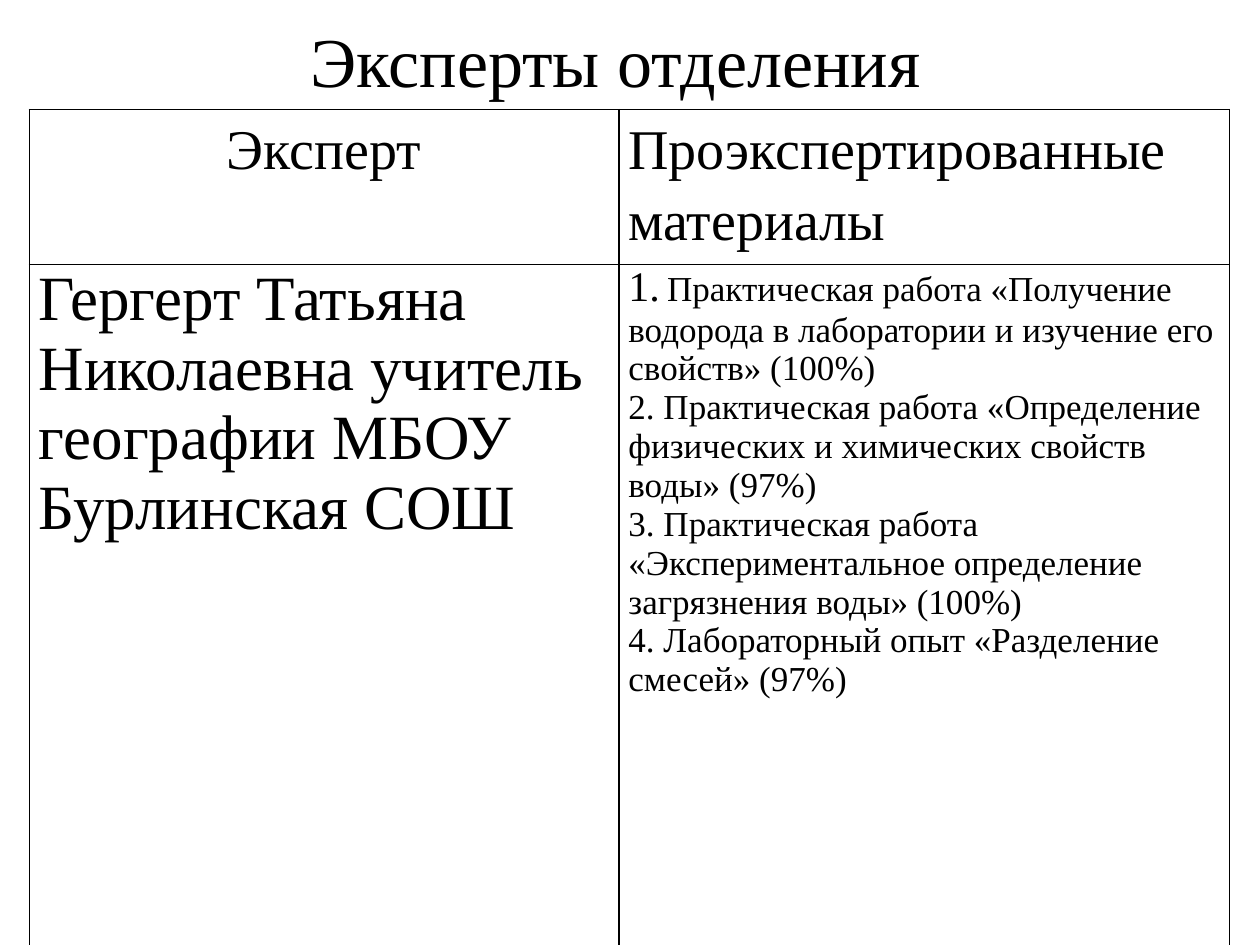
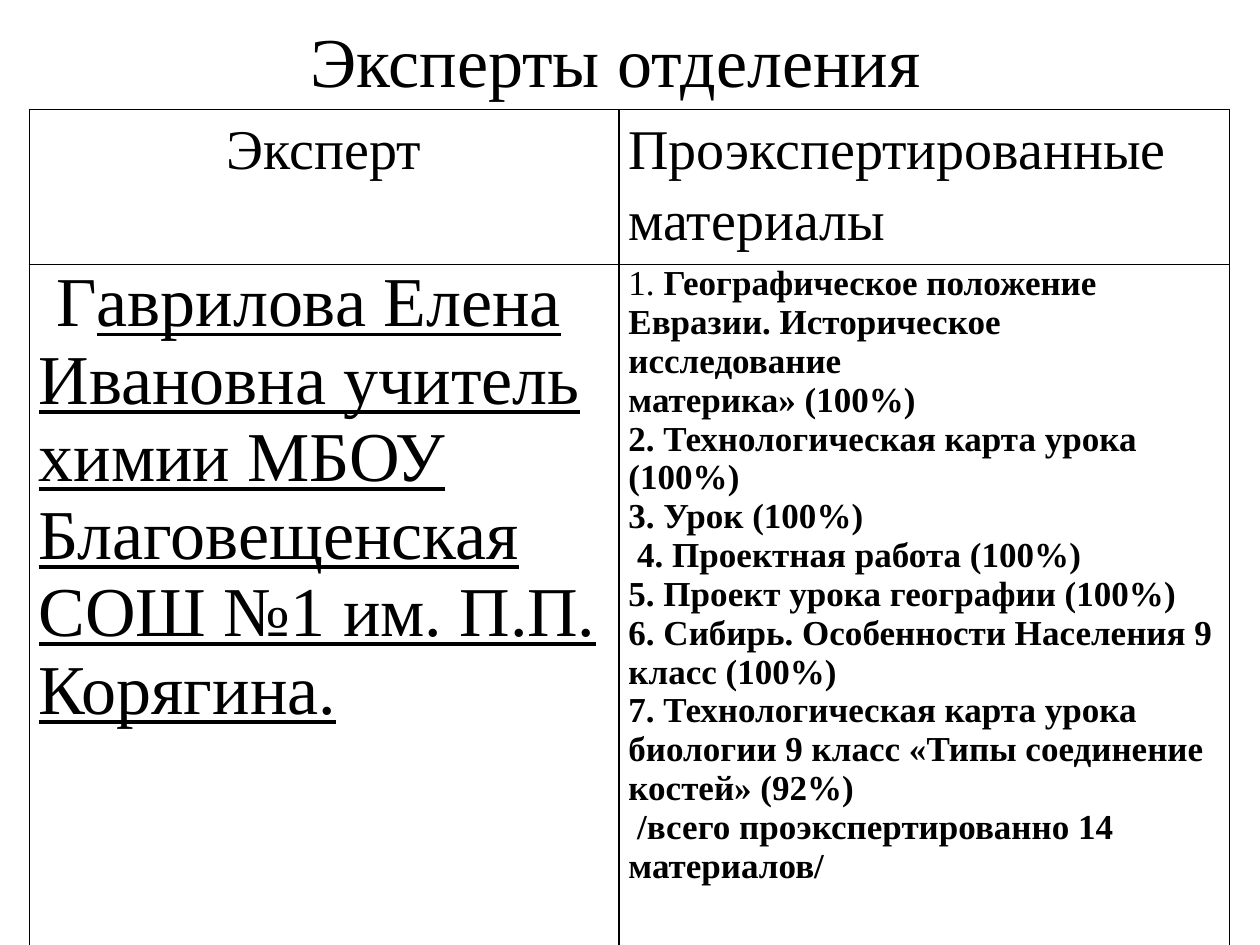
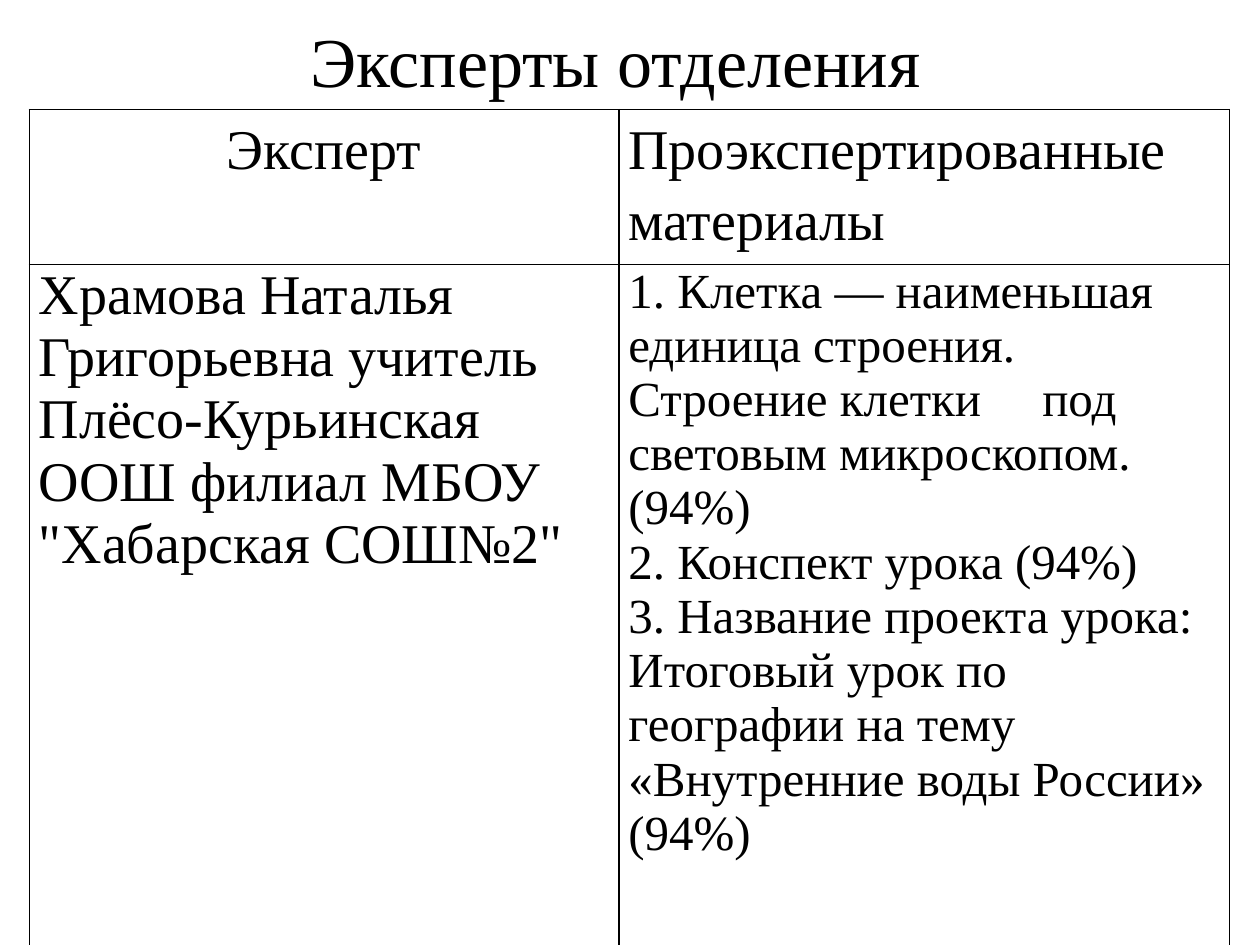
from dataclasses import dataclass

from lxml import etree
from pptx import Presentation
from pptx.dml.color import RGBColor
from pptx.enum.text import MSO_ANCHOR, PP_ALIGN
from pptx.oxml.ns import qn
from pptx.util import Pt

CENTER = PP_ALIGN.CENTER
LEFT = PP_ALIGN.LEFT
MIDDLE = MSO_ANCHOR.MIDDLE
TOP = MSO_ANCHOR.TOP

BLACK = "000000"
FONT = "Times New Roman"
TITLE = "Эксперты отделения"
HEADINGS = [("Эксперт", CENTER), ("Проэкспертированные материалы", LEFT)]
COLUMN_WIDTHS = [337, 349]
HEADER_HEIGHT = 88.4


@dataclass
class Span:
    """A stretch of text in one style."""
    text: str
    size: float
    bold: bool = False
    underline: bool = False
    font: str = FONT


@dataclass
class Line:
    """A paragraph of spans with its layout."""
    spans: list
    align: PP_ALIGN = LEFT
    spacing: float = 1.0
    indent: float = 0
    tab: float = 0


def color(value):
    """Turn a hex string into a colour."""
    return RGBColor.from_string(value)


def plain(text, size, **layout):
    """Make a paragraph with one regular span."""
    return Line([Span(text, size)], **layout)


def bold(text, indent=0):
    """Make a bold list paragraph."""
    return Line([Span(text, 20, bold=True)], indent=indent)


def add_span(para, span):
    """Add a span, turning each newline into a line break."""
    for index, piece in enumerate(span.text.split("\n")):
        if index:
            para.add_line_break()
        run = para.add_run()
        run.text = piece
        run.font.name = span.font
        run.font.size = Pt(span.size)
        run.font.bold = span.bold
        run.font.underline = span.underline
        run.font.color.rgb = color(BLACK)


def write_lines(frame, lines):
    """Fill a text frame with paragraphs."""
    for index, line in enumerate(lines):
        para = frame.add_paragraph() if index else frame.paragraphs[0]
        para.alignment = line.align
        para.line_spacing = line.spacing
        properties = para._p.get_or_add_pPr()
        if line.indent:
            properties.set("marL", "0")
            properties.set("indent", str(Pt(line.indent)))
        if line.tab:
            stops = etree.SubElement(properties, qn("a:tabLst"))
            etree.SubElement(stops, qn("a:tab"), pos=str(Pt(line.tab)), algn="l")
        for span in line.spans:
            add_span(para, span)


def add_title(slide):
    """Add the shared slide title."""
    box = slide.shapes.add_textbox(Pt(0), Pt(5), Pt(703.5), Pt(58))
    frame = box.text_frame
    frame.word_wrap = True
    frame.vertical_anchor = MIDDLE
    write_lines(frame, [plain(TITLE, 40, align=CENTER)])


def add_borders(cell):
    """Draw a thin line on every side of a cell."""
    properties = cell._tc.get_or_add_tcPr()
    for side in ("a:lnL", "a:lnR", "a:lnT", "a:lnB"):
        border = etree.SubElement(properties, qn(side), w=str(Pt(1)))
        fill = etree.SubElement(border, qn("a:solidFill"))
        etree.SubElement(fill, qn("a:srgbClr"), val=BLACK)


def fill_cell(cell, lines):
    """Style a table cell and write its text."""
    add_borders(cell)
    cell.fill.background()
    cell.margin_left = cell.margin_right = Pt(5.4)
    cell.margin_top = cell.margin_bottom = Pt(0)
    cell.vertical_anchor = TOP
    write_lines(cell.text_frame, lines)


def add_expert_table(slide, body_height, expert, materials):
    """Add the table of one expert and the reviewed materials."""
    heights = [HEADER_HEIGHT, body_height]
    frame = slide.shapes.add_table(
        2, 2, Pt(16.75), Pt(62.7), Pt(sum(COLUMN_WIDTHS)), Pt(sum(heights)))
    table = frame.table
    table.first_row = table.horz_banding = False
    for column, width in zip(table.columns, COLUMN_WIDTHS):
        column.width = Pt(width)
    for row, height in zip(table.rows, heights):
        row.height = Pt(height)
    for index, (text, align) in enumerate(HEADINGS):
        heading = plain(text, 32, align=align, spacing=1.15)
        fill_cell(table.cell(0, index), [heading])
    fill_cell(table.cell(1, 0), [expert])
    fill_cell(table.cell(1, 1), materials)


EXPERTS = [
    (438.5,
     plain("Гергерт Татьяна Николаевна учитель географии МБОУ Бурлинская СОШ", 36),
     [
         Line([
             Span("1.", 24),
             Span(" ", 18, font="Calibri"),
             Span("Практическая работа «Получение водорода в лаборатории "
                  "и изучение его свойств» (100%)", 20),
         ]),
         plain("2. Практическая работа «Определение физических и химических "
               "свойств воды» (97%)", 20),
         plain("3. Практическая работа «Экспериментальное определение "
               "загрязнения воды» (100%)", 20),
         plain("4. Лабораторный опыт «Разделение смесей» (97%)", 20),
     ]),
    (480,
     Line([
         Span("Г", 40),
         Span("аврилова Елена Ивановна учитель химии МБОУ Благовещенская "
              "СОШ №1 им. П.П. Корягина.", 40, underline=True),
     ], indent=10),
     [
         Line([
             Span("1. ", 20),
             Span("Географическое положение Евразии. Историческое исследование\n"
                  "материка» (100%)", 20, bold=True),
         ]),
         bold("2. Технологическая карта урока (100%)"),
         bold("3. Урок (100%)"),
         bold("4. Проектная работа (100%)", indent=5),
         bold("5. Проект урока географии (100%)"),
         bold("6. Сибирь. Особенности Населения 9 класс (100%)"),
         bold("7. Технологическая карта урока биологии 9 класс "
              "«Типы соединение\nкостей» (92%)"),
         bold("/всего проэкспертированно 14 материалов/", indent=5),
     ]),
    (465.5,
     plain("Храмова Наталья Григорьевна учитель Плёсо-Курьинская ООШ филиал "
           "МБОУ \"Хабарская СОШ№2\"", 32),
     [
         plain("1. Клетка — наименьшая единица строения.", 28),
         plain("Строение клетки\tпод световым микроскопом.(94%)", 28, tab=236.5),
         plain("2. Конспект урока (94%)", 28),
         plain("3. Название проекта урока: Итоговый урок по географии на тему "
               "«Внутренние воды России» (94%)", 28),
     ]),
]


def main():
    """Build the deck of expert slides."""
    deck = Presentation()
    deck.slide_width = Pt(720)
    deck.slide_height = Pt(540)
    for body_height, expert, materials in EXPERTS:
        slide = deck.slides.add_slide(deck.slide_layouts[6])
        add_title(slide)
        add_expert_table(slide, body_height, expert, materials)
    deck.save("out.pptx")


if __name__ == "__main__":
    main()
